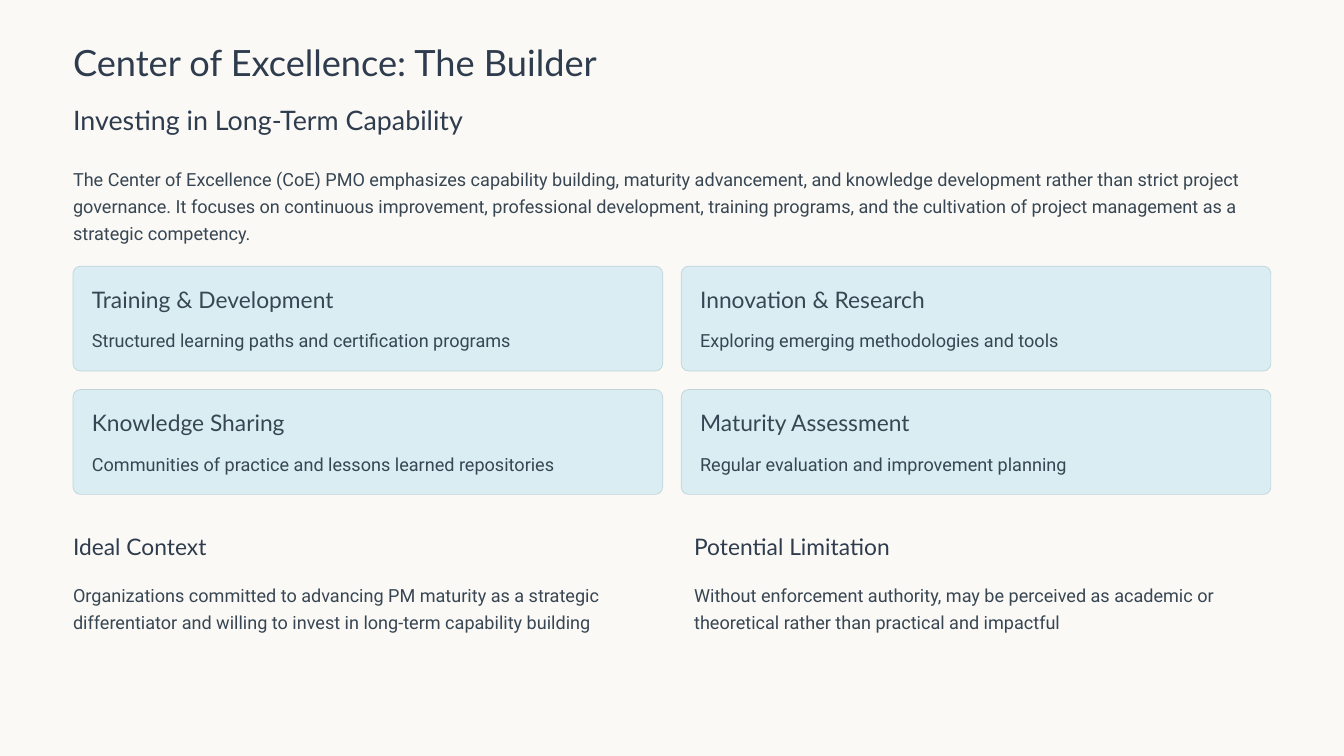
from pptx import Presentation
from pptx.dml.color import RGBColor
from pptx.enum.shapes import MSO_SHAPE
from pptx.util import Cm, Pt

INK = {"page": "FAF9F5", "title": "2E3C4E", "body": "384653",
       "card": "D9EDF2", "edge": "BFD3D8"}
STYLES = {"title": ("Lato", 31, 39), "sub": ("Lato", 23, 29),
          "head": ("Lato", 19.5, 24), "body": ("Roboto", 15.5, 23)}
CARDS = [
    ("Training & Development", "Structured learning paths and certification programs"),
    ("Innovation & Research", "Exploring emerging methodologies and tools"),
    ("Knowledge Sharing", "Communities of practice and lessons learned repositories"),
    ("Maturity Assessment", "Regular evaluation and improvement planning"),
]
NOTES = [
    ("Ideal Context", "Organizations committed to advancing PM maturity as a strategic "
     "differentiator and willing to invest in long-term capability building"),
    ("Potential Limitation", "Without enforcement authority, may be perceived as academic or "
     "theoretical rather than practical and impactful"),
]
INTRO = ("The Center of Excellence (CoE) PMO emphasizes capability building, maturity "
         "advancement, and knowledge development rather than strict project governance. "
         "It focuses on continuous improvement, professional development, training programs, "
         "and the cultivation of project management as a strategic competency.")


def color(name):
    """Return the named colour."""
    return RGBColor.from_string(INK[name])


def write(slide, text, style, ink, x, y, w, h):
    """Place one paragraph in a box without margins, in centimetres."""
    frame = slide.shapes.add_textbox(Cm(x), Cm(y), Cm(w), Cm(h)).text_frame
    frame.margin_left = frame.margin_right = 0
    frame.margin_top = frame.margin_bottom = 0
    frame.word_wrap = True
    para = frame.paragraphs[0]
    para.text = text
    face, size, lead = STYLES[style]
    para.line_spacing = Pt(lead)
    para.font.name = face
    para.font.size = Pt(size)
    para.font.color.rgb = color(ink)


def header(slide, x, y, w):
    """Place the title, subtitle and introduction."""
    write(slide, "Center of Excellence: The Builder", "title", "title", x, y, 16.61, 1.37)
    write(slide, "Investing in Long-Term Capability", "sub", "title", x, y + 1.93, 12.67, 1.04)
    write(slide, INTRO, "body", "body", x, y + 3.78, w, 2.49)


def card(slide, head, body, x, y, w, h):
    """Draw a rounded card with a heading and one line of text."""
    box = slide.shapes.add_shape(MSO_SHAPE.ROUNDED_RECTANGLE, Cm(x), Cm(y), Cm(w), Cm(h))
    box.adjustments[0] = 0.07
    box.shadow.inherit = False
    box.fill.solid()
    box.fill.fore_color.rgb = color("card")
    box.line.color.rgb = color("edge")
    box.line.width = Pt(0.6)
    pad = 0.57
    write(slide, head, "head", "body", x + pad, y + pad, 7.5, 0.86)
    write(slide, body, "body", "body", x + pad, y + 1.77, w - 2 * pad, 0.84)


def grid(slide, x, y, w):
    """Lay the cards out in two columns."""
    gap, high = 0.56, 3.17
    wide = (w - gap) / 2
    for i, (head, body) in enumerate(CARDS):
        row, col = divmod(i, 2)
        card(slide, head, body, x + col * (wide + gap), y + row * (high + gap), wide, high)


def notes(slide, x, y, w):
    """Set the two closing notes side by side."""
    gap = 1.34
    wide = (w - gap) / 2
    for i, (head, body) in enumerate(NOTES):
        left = x + i * (wide + gap)
        write(slide, head, "head", "title", left, y, 7.5, 0.86)
        write(slide, body, "body", "body", left, y + 1.43, wide, 1.65)


def main():
    """Build the slide and save it."""
    deck = Presentation()
    deck.slide_width, deck.slide_height = Cm(40.64), Cm(22.86)
    slide = deck.slides.add_slide(deck.slide_layouts[6])
    slide.background.fill.solid()
    slide.background.fill.fore_color.rgb = color("page")
    left, wide = 2.21, 36.22
    header(slide, left, 1.17, wide)
    grid(slide, left, 8.05, wide)
    notes(slide, left, 16.1, wide)
    deck.save("out.pptx")


if __name__ == "__main__":
    main()
